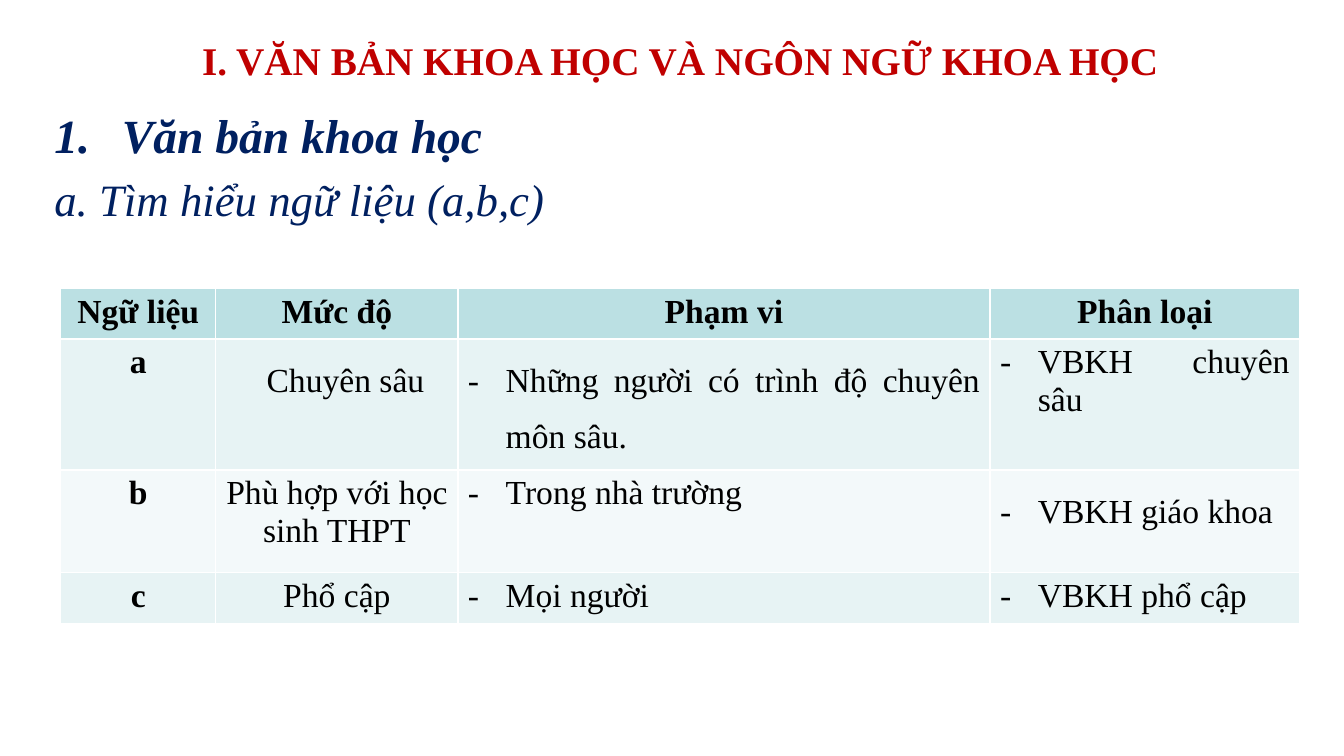
from lxml.etree import SubElement as Sub
from pptx import Presentation
from pptx.dml.color import RGBColor as Rgb
from pptx.enum.text import MSO_ANCHOR as Anchor, PP_ALIGN as Align
from pptx.oxml.ns import qn
from pptx.util import Cm, Pt

FONT = "Times New Roman"
HEX = {"title": "C00000", "body": "002060", "text": "000000",
       "head": "BBE0E3", "odd": "E7F3F4", "even": "F3F9FA"}


def write(para, text, look, size, color, bold=False, italic=False):
    """Fill a paragraph with one run; look holds its paragraph format."""
    for name, value in look.items():
        setattr(para, name, value)
    run = para.add_run()
    run.text = text
    font = {"name": FONT, "size": Pt(size), "bold": bold, "italic": italic}
    for name, value in font.items():
        setattr(run.font, name, value)
    run.font.color.rgb = Rgb.from_string(HEX[color])


def indent(para, left, first, mark=None, **kind):
    """Set the indents in cm, then add a bullet of the given tag."""
    props = para._p.get_or_add_pPr()
    props.set("marL", str(Cm(left)))
    props.set("indent", str(Cm(first)))
    if mark:
        Sub(props, qn("a:buFont"), typeface=FONT)
        Sub(props, qn(mark), **kind)


prs = Presentation()
prs.slide_width, prs.slide_height = Cm(33.87), Cm(19.05)
slide = prs.slides.add_slide(prs.slide_layouts[6])

# Title and subheads
title = slide.shapes.add_textbox(Cm(1.9), Cm(-0.08), Cm(30.48), Cm(3.18)).text_frame
title.word_wrap = True
title.vertical_anchor = Anchor.MIDDLE
write(title.paragraphs[0], "I. VĂN BẢN KHOA HỌC VÀ NGÔN NGỮ KHOA HỌC",
      {"alignment": Align.CENTER}, 28, "title", bold=True)

body = slide.shapes.add_textbox(Cm(1.12), Cm(2.54), Cm(32.18), Cm(3.94)).text_frame
body.word_wrap = True
main = body.paragraphs[0]
write(main, "Văn bản khoa học", {"space_before": Pt(6.8)}, 34, "body", True, True)
indent(main, 1.7, -1.7, "a:buAutoNum", type="arabicPeriod")
write(body.add_paragraph(), "a. Tìm hiểu ngữ liệu (a,b,c)",
      {"space_before": Pt(6.4)}, 32, "body", italic=True)

# Table
rows = [
    ["Ngữ liệu", "Mức độ", "Phạm vi", "Phân loại"],
    ["a", "Chuyên sâu", "Những người có trình độ chuyên môn sâu.", "VBKH chuyên sâu"],
    ["b", "Phù hợp với học sinh THPT", "Trong nhà trường", "VBKH giáo khoa"],
    ["c", "Phổ cập", "Mọi người", "VBKH phổ cập"],
]
widths = [3.91, 6.1, 13.41, 7.8]
heights = [1.18, 3.07, 2.59, 1.18]
loose = {(1, 1), (1, 2), (2, 3)}  # cells with 1.5 line spacing

table = slide.shapes.add_table(len(rows), len(widths), Cm(1.53), Cm(7.27),
                               Cm(sum(widths)), Cm(sum(heights))).table
for col, width in zip(table.columns, widths):
    col.width = Cm(width)
for r, row in enumerate(rows):
    table.rows[r].height = Cm(heights[r])
    fill = "head" if r == 0 else "odd" if r % 2 else "even"
    for c, text in enumerate(row):
        cell = table.cell(r, c)
        cell.fill.solid()
        cell.fill.fore_color.rgb = Rgb.from_string(HEX[fill])
        listed = r > 0 and c > 1
        look = {"alignment": Align.JUSTIFY if listed else Align.CENTER}
        if (r, c) in loose:
            look["line_spacing"] = 1.5
        para = cell.text_frame.paragraphs[0]
        write(para, text, look, 24, "text", bold=r == 0 or c == 0)
        if listed:
            indent(para, 0.95, -0.95, "a:buChar", char="-")
        elif (r, c) in loose:
            indent(para, 0, 0.43)

prs.save("out.pptx")
